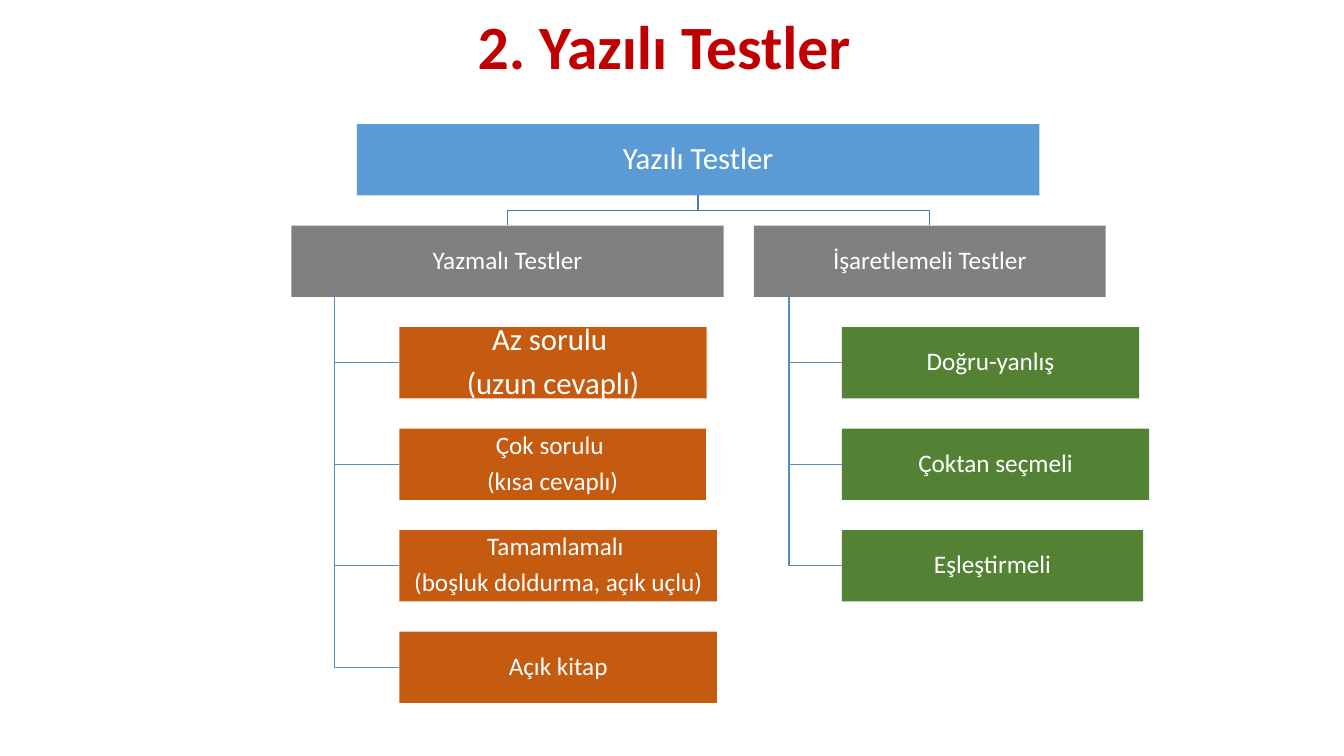
from pptx import Presentation
from pptx.dml.color import RGBColor
from pptx.enum.shapes import MSO_SHAPE as SHAPE
from pptx.enum.text import MSO_ANCHOR as ANCHOR, PP_ALIGN as ALIGN
from pptx.util import Pt

RED = RGBColor(0xC0, 0x00, 0x00)
WHITE = RGBColor(0xFF, 0xFF, 0xFF)
BLUE = RGBColor(0x5B, 0x9B, 0xD5)
GRAY = RGBColor(0x80, 0x80, 0x80)
ORANGE = RGBColor(0xC5, 0x5A, 0x11)
GREEN = RGBColor(0x54, 0x82, 0x35)
ROOT_LINE = RGBColor(0x49, 0x7C, 0xAB)
LEAF_LINE = RGBColor(0x53, 0x8D, 0xC1)

FIRST_TOP, ROW_PITCH, BOX_HEIGHT = 88.6, 72.5, 51
ROOT_LEFT, ROOT_WIDTH = 254.9, 487.5
TRUNK_SHARE, LEAF_SHARE = 0.1, 0.25  # of the branch width

# Branch: text, left, width, leaf colour, leaves (lines, width, text size)
BRANCHES = [
    ("Yazmalı Testler", 208.1, 308.9, ORANGE, [
        (["Az sorulu ", "(uzun cevaplı)"], 219.5, 22),
        (["Çok sorulu ", "(kısa cevaplı)"], 218.9, 18),
        (["Tamamlamalı ", "(boşluk doldurma, açık uçlu)"], 226.8, 18),
        (["Açık kitap"], 226.8, 18),
    ]),
    ("İşaretlemeli Testler", 538.5, 251.3, GREEN, [
        (["Doğru-yanlış"], 212.4, 18),
        (["Çoktan seçmeli"], 219.6, 18),
        (["Eşleştirmeli"], 215.3, 18),
    ]),
]


def row_top(row):
    return FIRST_TOP + row * ROW_PITCH


def write(tf, lines, size, color, inset, bold=False, after=0.0):
    """Fill a text frame; after is the paragraph gap as a share of the size."""
    frame_format = {"word_wrap": True, "vertical_anchor": ANCHOR.MIDDLE}
    for side in ("left", "top", "right", "bottom"):
        frame_format[f"margin_{side}"] = Pt(inset)
    for name, value in frame_format.items():
        setattr(tf, name, value)
    for i, line in enumerate(lines):
        p = tf.paragraphs[0] if i == 0 else tf.add_paragraph()
        paragraph_format = {"alignment": ALIGN.CENTER, "line_spacing": 0.9,
                            "space_after": Pt(size * after)}
        for name, value in paragraph_format.items():
            setattr(p, name, value)
        r = p.add_run()
        r.text = line
        for name, value in {"name": "Calibri", "size": Pt(size), "bold": bold}.items():
            setattr(r.font, name, value)
        r.font.color.rgb = color


def add_title(s, text):
    box = s.shapes.add_textbox(Pt(169.2), Pt(0), Pt(620.6), Pt(71.3))
    write(box.text_frame, [text], 44, RED, 3.6, bold=True)


def add_box(s, lines, left, row, width, fill, size):
    sp = s.shapes.add_shape(SHAPE.RECTANGLE, Pt(left), Pt(row_top(row)),
                            Pt(width), Pt(BOX_HEIGHT))
    sp.shadow.inherit = False
    sp.fill.solid()
    sp.fill.fore_color.rgb = fill
    sp.line.fill.background()
    write(sp.text_frame, lines, size, WHITE, 1, after=0.35)


def add_bent_line(s, points, color):
    start, *rest = [(Pt(x), Pt(y)) for x, y in points]
    builder = s.shapes.build_freeform(*start)
    builder.add_line_segments(rest, close=False)
    sp = builder.convert_to_shape()
    sp.shadow.inherit = False
    sp.fill.background()
    sp.line.color.rgb = color
    sp.line.width = Pt(1)


def add_branch_lines(s, left, width, leaf_count):
    """Join the root to one branch, and that branch to its leaves."""
    root_x, branch_x = ROOT_LEFT + ROOT_WIDTH / 2, left + width / 2
    root_bottom, branch_top = row_top(0) + BOX_HEIGHT, row_top(1)
    middle = (root_bottom + branch_top) / 2
    add_bent_line(s, [(root_x, root_bottom), (root_x, middle),
                      (branch_x, middle), (branch_x, branch_top)], ROOT_LINE)
    trunk_x, leaf_x = left + width * TRUNK_SHARE, left + width * LEAF_SHARE
    for row in range(2, 2 + leaf_count):
        y = row_top(row) + BOX_HEIGHT / 2
        add_bent_line(s, [(trunk_x, row_top(1) + BOX_HEIGHT),
                          (trunk_x, y), (leaf_x, y)], LEAF_LINE)


def main():
    prs = Presentation()
    prs.slide_width, prs.slide_height = Pt(960), Pt(540)
    s = prs.slides.add_slide(prs.slide_layouts[6])
    add_title(s, "2. Yazılı Testler ")
    for _, left, width, _, leaves in BRANCHES:
        add_branch_lines(s, left, width, len(leaves))
    add_box(s, ["Yazılı Testler"], ROOT_LEFT, 0, ROOT_WIDTH, BLUE, 22)
    for text, left, width, color, leaves in BRANCHES:
        add_box(s, [text], left, 1, width, GRAY, 18)
        for row, (lines, leaf_width, size) in enumerate(leaves, start=2):
            add_box(s, lines, left + width * LEAF_SHARE, row, leaf_width, color, size)
    prs.save("out.pptx")


if __name__ == "__main__":
    main()
